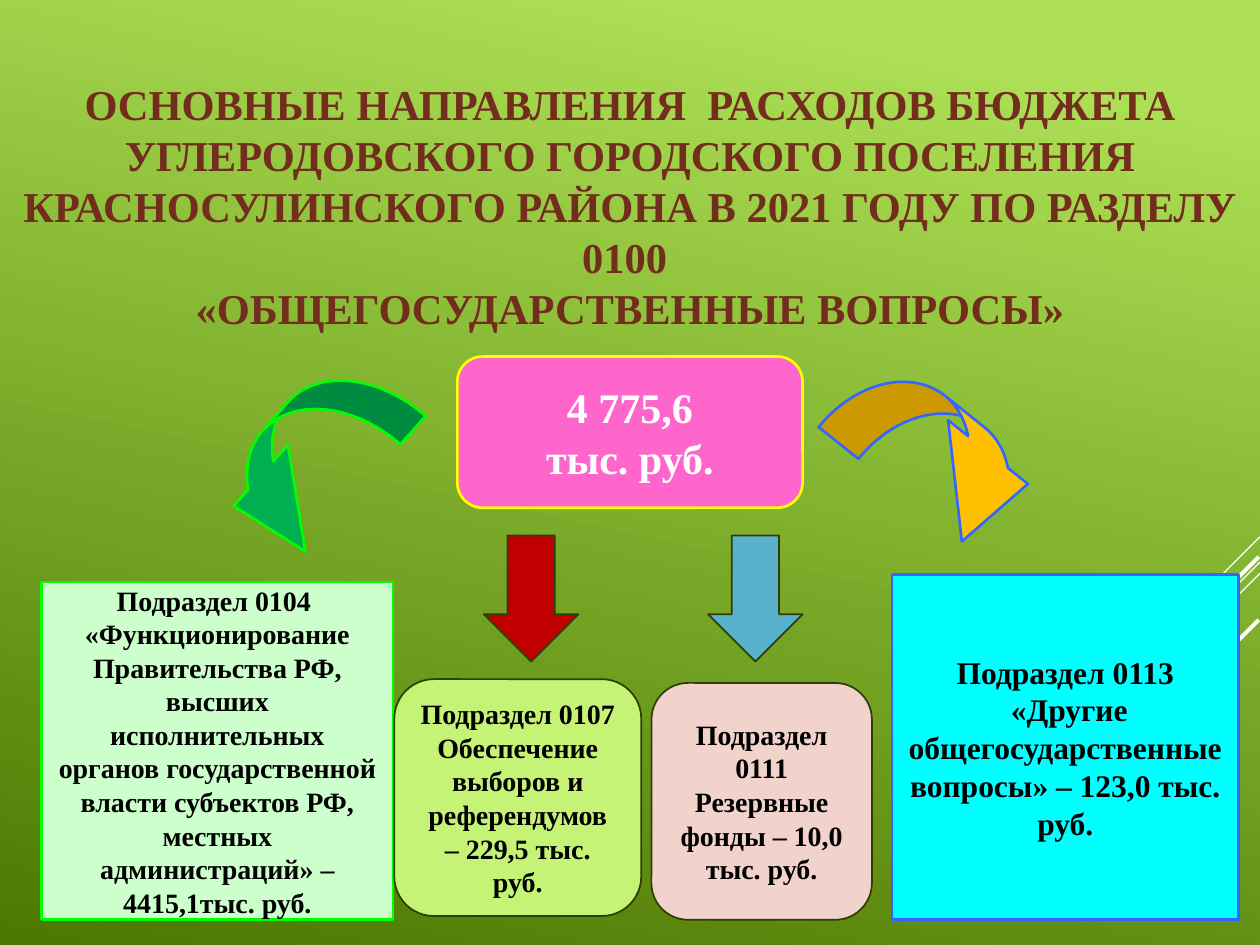
from dataclasses import dataclass
from typing import Any

from lxml import etree
from pptx import Presentation
from pptx import util as u
from pptx.dml.color import RGBColor
from pptx.enum import shapes, text
from pptx.oxml.ns import qn

SHAPE = shapes.MSO_SHAPE
OLIVE = "2E3E07"


def color(hex_value):
    return RGBColor.from_string(hex_value)


@dataclass
class BudgetSlide:
    slide: Any
    font: str = "Times New Roman"

    def background(self, start, end, angle):
        fill = self.slide.background.fill
        fill.gradient()
        fill.gradient_angle = angle
        for stop, position, tone in zip(fill.gradient_stops, (0.1, 1), (start, end)):
            stop.position = position
            stop.color.rgb = color(tone)

    def stripe(self, x, y, length, width):
        line = self.slide.shapes.add_connector(
            shapes.MSO_CONNECTOR.STRAIGHT,
            *map(u.Inches, (x, y, x - length, y + length)))
        line.line.color.rgb = color("FFFFFF")
        line.line.width = u.Pt(width)
        etree.SubElement(line._element.spPr, qn("a:effectLst"))

    def set_words(self, frame, paragraphs, size, tone, insets=(0.1, 0.05)):
        frame.word_wrap = True
        frame.vertical_anchor = text.MSO_ANCHOR.MIDDLE
        frame.margin_left = frame.margin_right = u.Inches(insets[0])
        frame.margin_top = frame.margin_bottom = u.Inches(insets[1])
        frame.text = "\n".join(paragraphs)
        for paragraph in frame.paragraphs:
            paragraph.alignment = text.PP_ALIGN.CENTER
            for run in paragraph.runs:
                run.font.name = self.font
                run.font.size = u.Pt(size)
                run.font.bold = True
                run.font.color.rgb = color(tone)

    def heading(self, box, words, size, tone):
        title = self.slide.shapes.add_textbox(*map(u.Inches, box))
        self.set_words(title.text_frame, [words], size, tone)

    def figure(self, kind, box, fill, outline, width=1.5, rotation=0, adjustments=()):
        shape = self.slide.shapes.add_shape(kind, *map(u.Inches, box))
        shape.shadow.inherit = False
        shape.fill.solid()
        shape.fill.fore_color.rgb = color(fill)
        shape.line.color.rgb = color(outline)
        shape.line.width = u.Pt(width)
        shape.rotation = rotation
        for index, value in enumerate(adjustments):
            shape.adjustments[index] = value
        return shape

    def card(self, kind, box, fill, outline, paragraphs, size,
             tone="000000", insets=(0.1, 0.05), width=1.5):
        shape = self.figure(kind, box, fill, outline, width)
        self.set_words(shape.text_frame, paragraphs, size, tone, insets)


def main():
    deck = Presentation()
    deck.slide_width, deck.slide_height = u.Inches(10), u.Inches(7.5)
    budget = BudgetSlide(deck.slides.add_slide(deck.slide_layouts[6]))

    budget.background("ACDF55", "4C7800", 258)
    for stripe in ((10, 4.26, 0.83, 0.75), (10, 4.46, 2.7, 0.75),
                   (10, 4.55, 1.72, 0.75), (9.99, 4.42, 1.57, 2.25),
                   (9.99, 4.92, 1.14, 2.25)):
        budget.stripe(*stripe)

    budget.heading(
        (0, 0.61, 10, 2.04),
        "ОСНОВНЫЕ НАПРАВЛЕНИЯ  РАСХОДОВ БЮДЖЕТА УГЛЕРОДОВСКОГО ГОРОДСКОГО "
        "ПОСЕЛЕНИЯ КРАСНОСУЛИНСКОГО РАЙОНА В 2021 ГОДУ ПО РАЗДЕЛУ 0100 "
        "\v«ОБЩЕГОСУДАРСТВЕННЫЕ ВОПРОСЫ»",
        24.3, "722D1D")

    budget.card(SHAPE.ROUNDED_RECTANGLE, (3.63, 2.83, 2.74, 1.2), "FF66CC", "FFFF00",
                ["4 775,6", "тыс. руб."], 24, "FFFFFF", (0.14, 0.05))
    budget.card(SHAPE.RECTANGLE, (0.33, 4.62, 2.79, 2.68), "CCFFCC", "00FF00",
                ["Подраздел 0104 ",
                 "«Функционирование Правительства РФ, высших исполнительных органов "
                 "государственной власти субъектов РФ, местных администраций» –",
                 "4415,1тыс. руб."], 16, insets=(0.12, 0))
    budget.card(SHAPE.RECTANGLE, (7.08, 4.56, 2.75, 2.74), "00FFFF", "3366FF",
                ["Подраздел 0113",
                 " «Другие общегосударственные вопросы» – 123,0 тыс. руб."],
                18, insets=(0.12, 0))

    budget.figure(SHAPE.CURVED_DOWN_ARROW, (6.55, 3.24, 1.86, 0.82), "FFC000", "3366FF",
                  rotation=38.6, adjustments=(0.493, 0.988, 0.834))
    budget.figure(SHAPE.CURVED_UP_ARROW, (1.58, 3.22, 1.76, 0.89), "00B050", "00FF00",
                  rotation=131.6, adjustments=(0.338, 0.727, 0.747))
    for left, fill in ((3.84, "C00000"), (5.62, "59B1CD")):
        budget.figure(SHAPE.DOWN_ARROW, (left, 4.25, 0.75, 1), fill, OLIVE, 1)

    for box, fill, paragraphs in (
        ((3.13, 5.39, 1.96, 1.88), "C5F375",
         ["Подраздел 0107", "Обеспечение выборов и референдумов – 229,5 тыс. руб."]),
        ((5.17, 5.42, 1.75, 1.88), "F2D3CC",
         ["Подраздел 0111", "Резервные фонды – 10,0 тыс. руб."]),
    ):
        budget.card(SHAPE.ROUNDED_RECTANGLE, box, fill, OLIVE, paragraphs, 16, width=1)

    deck.save("out.pptx")


if __name__ == "__main__":
    main()
